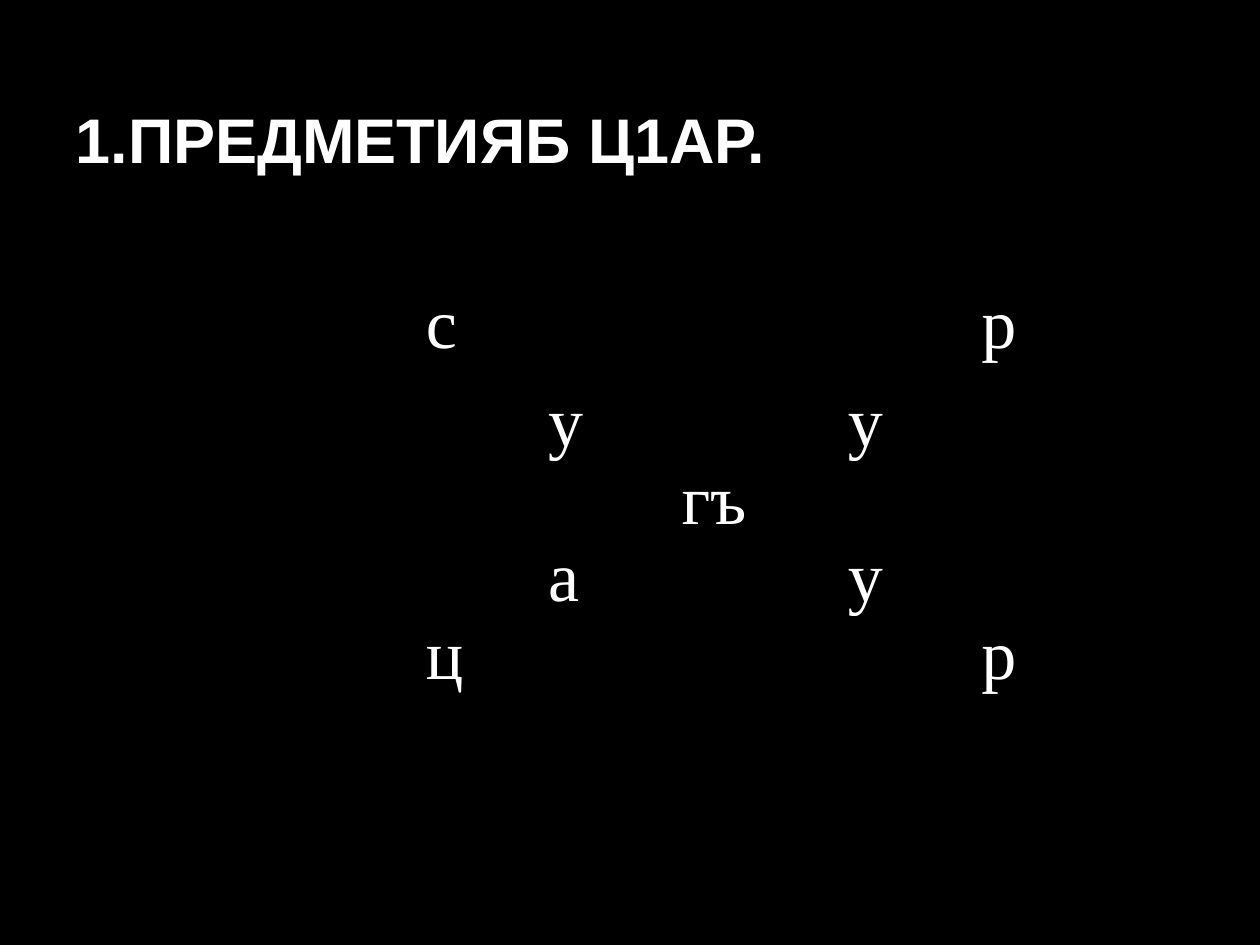
from lxml import etree
from pptx import Presentation
from pptx.dml.color import RGBColor
from pptx.enum.text import MSO_ANCHOR, MSO_AUTO_SIZE, PP_ALIGN
from pptx.oxml.ns import qn
from pptx.util import Inches, Pt

LEFT = PP_ALIGN.LEFT
JUSTIFY = PP_ALIGN.JUSTIFY
MIDDLE = MSO_ANCHOR.MIDDLE
NO_AUTOFIT = MSO_AUTO_SIZE.NONE

BLACK = RGBColor(0x00, 0x00, 0x00)
WHITE = RGBColor(0xFF, 0xFF, 0xFF)

LETTER_ROWS = [
    ["с", "", "", "", "р"],
    ["", "у", "", "у", ""],
    ["", "", "гъ", "", ""],
    ["", "а", "", "у", ""],
    ["ц", "", "", "", "р"],
]
COLUMN_WIDTHS = [0.97, 1.06, 1.32, 1.06, 1.06]
ROW_HEIGHTS = [0.78] + [0.61] * 4


def add_run(paragraph, text, font_name, size, bold=False):
    run = paragraph.add_run()
    run.text = text
    run.font.name = font_name
    run.font.size = Pt(size)
    run.font.bold = bold
    run.font.color.rgb = WHITE


def indent_paragraph(paragraph):
    properties = paragraph._p.get_or_add_pPr()
    properties.set("marL", str(Inches(0.5)))
    properties.set("indent", "0")
    return properties


def add_numbered_title(slide, text):
    title = slide.shapes.title
    title.left, title.top = Inches(0), Inches(0)
    title.width, title.height = Inches(6.23), Inches(1.72)
    frame = title.text_frame
    frame.word_wrap = True
    frame.auto_size = NO_AUTOFIT
    frame.vertical_anchor = MIDDLE
    frame.margin_top = Inches(0.53)
    paragraph = frame.paragraphs[0]
    paragraph.alignment = LEFT
    properties = indent_paragraph(paragraph)
    etree.SubElement(properties, qn("a:buAutoNum"), type="arabicPeriod")
    add_run(paragraph, text, "Arial", 36, bold=True)


def set_borders(cell):
    properties = cell._tc.get_or_add_tcPr()
    for index, side in enumerate(("lnL", "lnR", "lnT", "lnB")):
        line = etree.Element(qn(f"a:{side}"), w=str(Pt(1)))
        fill = etree.SubElement(line, qn("a:solidFill"))
        etree.SubElement(fill, qn("a:srgbClr"), val=str(BLACK))
        properties.insert(index, line)


def fill_cell(cell, letter):
    cell.margin_left = cell.margin_right = Inches(0.07)
    cell.margin_top = cell.margin_bottom = 0
    cell.fill.background()
    set_borders(cell)
    if letter:
        paragraph = cell.text_frame.paragraphs[0]
        paragraph.alignment = JUSTIFY
        indent_paragraph(paragraph)
        add_run(paragraph, letter, "Times New Roman", 40)


def add_letter_table(slide):
    shape = slide.shapes.add_table(
        len(LETTER_ROWS), len(COLUMN_WIDTHS), Inches(2.81), Inches(2.27),
        Inches(sum(COLUMN_WIDTHS)), Inches(sum(ROW_HEIGHTS)))
    table = shape.table
    table.first_row = False
    table.horz_banding = False
    for column, width in zip(table.columns, COLUMN_WIDTHS):
        column.width = Inches(width)
    for row, height, letters in zip(table.rows, ROW_HEIGHTS, LETTER_ROWS):
        row.height = Inches(height)
        for cell, letter in zip(row.cells, letters):
            fill_cell(cell, letter)


def main():
    presentation = Presentation()
    presentation.slide_width = Inches(10)
    presentation.slide_height = Inches(7.5)
    slide = presentation.slides.add_slide(presentation.slide_layouts[5])
    slide.background.fill.solid()
    slide.background.fill.fore_color.rgb = BLACK
    add_letter_table(slide)
    add_numbered_title(slide, "ПРЕДМЕТИЯБ Ц1АР.")
    presentation.save("out.pptx")


if __name__ == "__main__":
    main()
